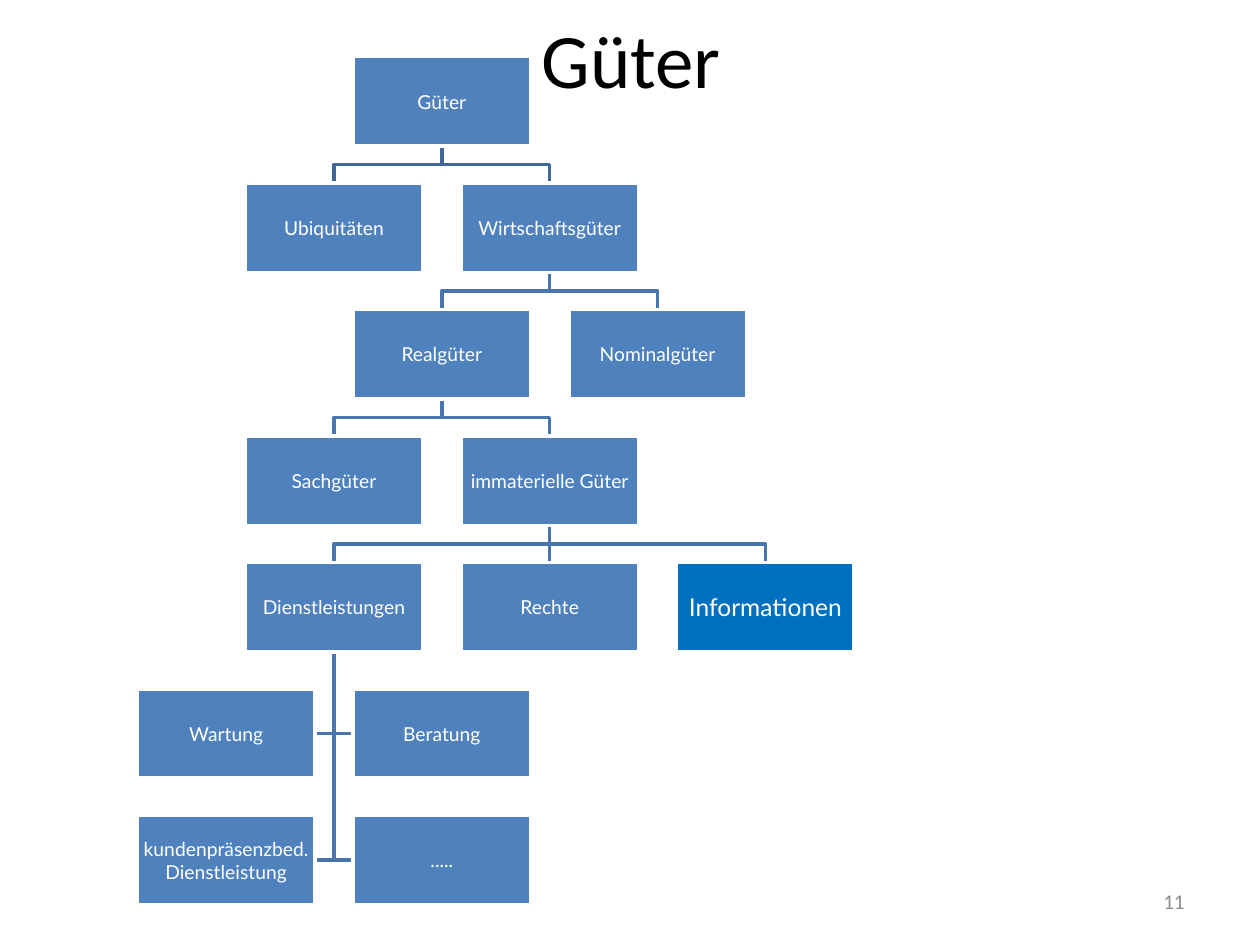
"""Build a slide with a tree of the kinds of goods."""
from lxml.etree import SubElement
from pptx import Presentation
from pptx.dml.color import RGBColor
from pptx.enum.shapes import MSO_CONNECTOR, MSO_SHAPE
from pptx.enum.text import MSO_ANCHOR, PP_ALIGN
from pptx.oxml.ns import qn
from pptx.util import Inches, Pt

COLORS = {"box": "4F81BD", "highlight": "0070C0", "white": "FFFFFF", "black": "000000",
          "gray": "8C8C8C", "root_line": "3F6797", "line": "4875AC"}

# name: (half column, row)
GOODS = {
    "Güter": (2, 0),
    "Ubiquitäten": (1, 1), "Wirtschaftsgüter": (3, 1),
    "Realgüter": (2, 2), "Nominalgüter": (4, 2),
    "Sachgüter": (1, 3), "immaterielle Güter": (3, 3),
    "Dienstleistungen": (1, 4), "Rechte": (3, 4), "Informationen": (5, 4),
    "Wartung": (0, 5), "Beratung": (2, 5),
    "kundenpräsenzbed.\nDienstleistung": (0, 6), ".....": (2, 6),
}
BRANCHES = {
    "Güter": ["Ubiquitäten", "Wirtschaftsgüter"],
    "Wirtschaftsgüter": ["Realgüter", "Nominalgüter"],
    "Realgüter": ["Sachgüter", "immaterielle Güter"],
    "immaterielle Güter": ["Dienstleistungen", "Informationen", "Rechte"],
    "Dienstleistungen": ["Wartung", "Beratung", "kundenpräsenzbed.\nDienstleistung", "....."],
}
HANGING = "Dienstleistungen"
HIGHLIGHT = "Informationen"
LEFT, TOP = 1.09, 0.45
WIDTH, HEIGHT = 1.41, 0.71
COLUMN_STEP, ROW_STEP = (5.37 - LEFT) / 5, (6.47 - TOP) / 6


def color(name):
    return RGBColor.from_string(COLORS[name])


def write(shape, text, size, font, color_name, align, inset=None):
    frame = shape.text_frame
    frame.text = text
    frame.word_wrap = True
    frame.vertical_anchor = MSO_ANCHOR.MIDDLE
    if inset is not None:
        frame.margin_left = frame.margin_right = Inches(inset)
        frame.margin_top = frame.margin_bottom = Inches(inset)
    for paragraph in frame.paragraphs:
        paragraph.alignment = align
        for run in paragraph.runs:
            run.font.size = Pt(size)
            run.font.name = font
            run.font.color.rgb = color(color_name)


def add_box(slide, name, column, row):
    box = slide.shapes.add_shape(
        MSO_SHAPE.RECTANGLE, Inches(LEFT + column * COLUMN_STEP),
        Inches(TOP + row * ROW_STEP), Inches(WIDTH), Inches(HEIGHT))
    box.shadow.inherit = False
    box.fill.solid()
    box.fill.fore_color.rgb = color("highlight" if name == HIGHLIGHT else "box")
    box.line.color.rgb = color("white")
    box.line.width = Pt(2)
    write(box, name, 14 if name == HIGHLIGHT else 11, "Lato", "white", PP_ALIGN.CENTER, 0.01)
    return box


def center(box):
    return box.left + box.width // 2


def add_straight(slide, parent, child):
    line = slide.shapes.add_connector(
        MSO_CONNECTOR.STRAIGHT, center(parent), parent.top + parent.height,
        center(child), child.top)
    line.begin_connect(parent, 2)
    line.end_connect(child, 0)
    SubElement(line._element.spPr, qn("a:effectLst"))
    return line


def add_bent(slide, parent, child, hanging):
    start_x, start_y = center(parent), parent.top + parent.height
    if hanging:
        middle = child.top + child.height // 2
        side = child.left if child.left > parent.left else child.left + child.width
        points = [(start_x, middle), (side, middle)]
    else:
        middle = (start_y + child.top) // 2
        points = [(start_x, middle), (center(child), middle), (center(child), child.top)]
    builder = slide.shapes.build_freeform(start_x, start_y)
    builder.add_line_segments(points, close=False)
    line = builder.convert_to_shape()
    line.shadow.inherit = False
    line.fill.background()
    return line


def main():
    presentation = Presentation()
    presentation.slide_width, presentation.slide_height = Inches(10), Inches(7.5)
    slide = presentation.slides.add_slide(presentation.slide_layouts[6])

    title = slide.shapes.add_textbox(Inches(0.51), 0, Inches(9), Inches(0.91))
    write(title, "Güter", 44, "Calibri", "black", PP_ALIGN.CENTER)

    boxes = {name: add_box(slide, name, *place) for name, place in GOODS.items()}
    for parent_name, children in BRANCHES.items():
        parent = boxes[parent_name]
        for child in (boxes[name] for name in children):
            if center(parent) == center(child):
                line = add_straight(slide, parent, child)
            else:
                line = add_bent(slide, parent, child, parent_name == HANGING)
            line.line.color.rgb = color("root_line" if parent_name == "Güter" else "line")
            line.line.width = Pt(2)
    for box in boxes.values():
        slide.shapes._spTree.append(box._element)

    number = slide.shapes.add_textbox(Inches(7.17), Inches(6.95), Inches(2.33), Inches(0.4))
    write(number, "11", 12, "Calibri", "gray", PP_ALIGN.RIGHT)

    presentation.save("out.pptx")


if __name__ == "__main__":
    main()
